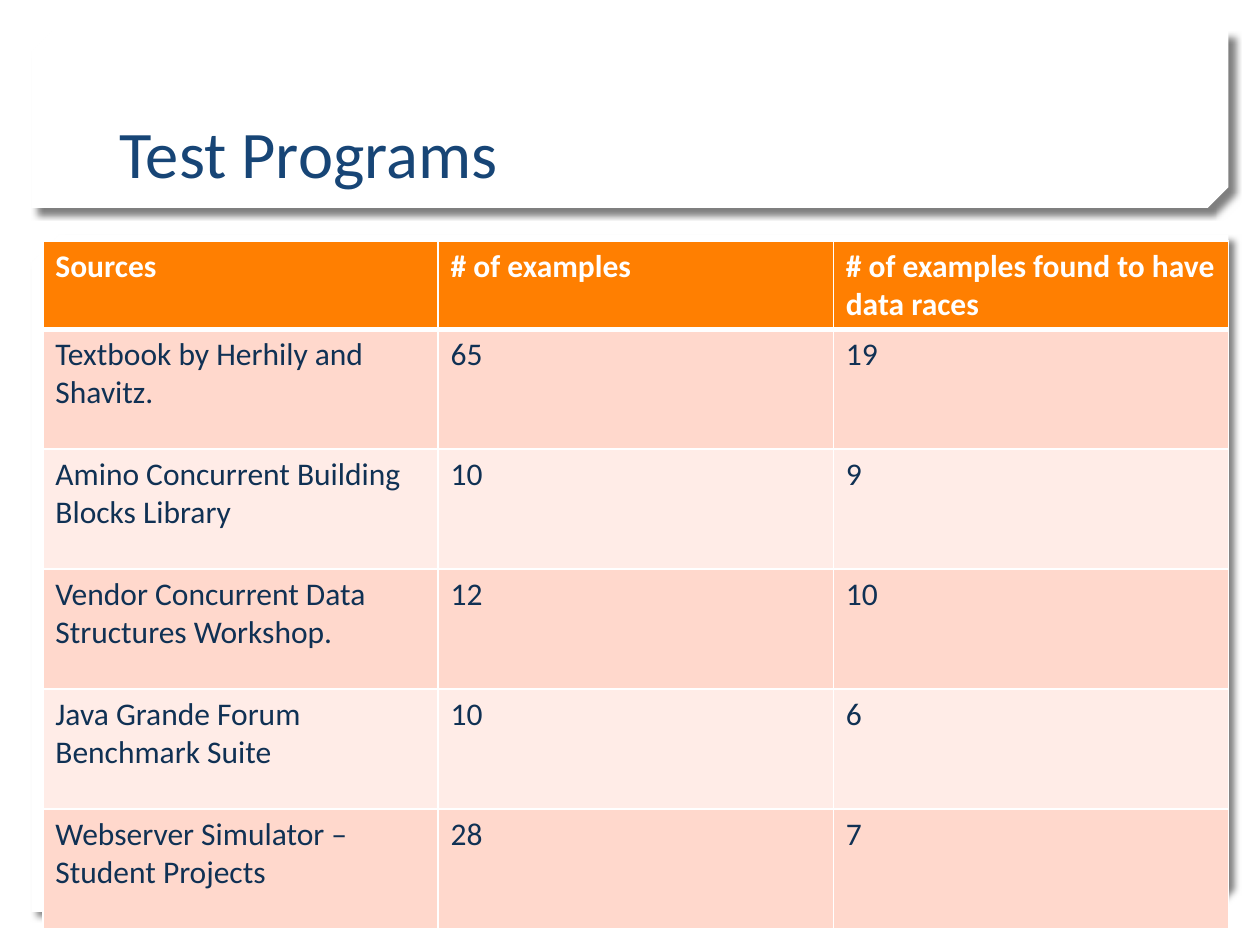
from dataclasses import dataclass

from lxml import etree
from pptx import Presentation
from pptx import util as u
from pptx.dml.color import RGBColor
from pptx.enum import shapes, text
from pptx.oxml import ns

WIDE, HIGH = 10, 7.5


@dataclass(frozen=True)
class Theme:
    font: str = "Calibri"
    head: int = 38
    body: int = 18
    white: str = "FFFFFF"
    title: str = "174576"
    ink: str = "103154"
    top: str = "FF7F01"
    bands: tuple = ("FFD8CC", "FFECE7")
    shade: str = "000000"


THEME = Theme()

ROWS = [
    ("Sources", "# of examples", "# of examples found to have data races"),
    ("Textbook by Herhily and Shavitz.", "65", "19"),
    ("Amino Concurrent Building Blocks Library", "10", "9"),
    ("Vendor Concurrent Data Structures Workshop.", "12", "10"),
    ("Java Grande Forum Benchmark Suite", "10", "6"),
    ("Webserver Simulator – Student Projects", "28", "7"),
]


def box(left, top, width, height):
    """Turn shares of the slide into lengths."""
    return (u.Inches(left * WIDE), u.Inches(top * HIGH),
            u.Inches(width * WIDE), u.Inches(height * HIGH))


def paint(fill, color):
    fill.solid()
    fill.fore_color.rgb = RGBColor.from_string(color)


def node(parent, tag, **attrs):
    item = etree.SubElement(parent, ns.qn(tag))
    for key, value in attrs.items():
        item.set(key, str(value))
    return item


def write(frame, words, size, color, bold=False):
    run = frame.paragraphs[0].add_run()
    run.text = words
    font = run.font
    font.name, font.size, font.bold = THEME.font, u.Pt(size), bold
    font.color.rgb = RGBColor.from_string(color)


def add_panel(slide, area, snip):
    """White card with one pair of snipped corners and a soft shadow."""
    card = slide.shapes.add_shape(
        shapes.MSO_SHAPE.SNIP_2_DIAG_RECTANGLE, *area)
    card.adjustments[0], card.adjustments[1] = 0, snip
    paint(card.fill, THEME.white)
    card.line.fill.background()
    props = card._element.spPr
    props.xfrm.set("flipV", "1")
    glow = node(node(props, "a:effectLst"), "a:outerShdw",
                blurRad=u.Pt(4), dist=u.Pt(5), dir=45 * 60000,
                algn="tl", rotWithShape=0)
    tint = node(glow, "a:srgbClr", val=THEME.shade)
    node(tint, "a:alpha", val=50000)


def add_title(slide, area, words):
    frame = slide.shapes.add_textbox(*area).text_frame
    frame.word_wrap = True
    frame.vertical_anchor = text.MSO_ANCHOR.BOTTOM
    write(frame, words, THEME.head, THEME.title)


def edge(cell, side, points):
    line = node(cell._tc.get_or_add_tcPr(), "a:ln" + side, w=u.Pt(points))
    node(node(line, "a:solidFill"), "a:srgbClr", val=THEME.white)


def fill_cell(cell, words, row):
    # Borders go before the fill; the rule under the header is thicker
    for side in "LRTB":
        edge(cell, side, 3 if (row, side) in ((0, "B"), (1, "T")) else 1)
    first = row == 0
    paint(cell.fill, THEME.top if first else THEME.bands[(row - 1) % 2])
    write(cell.text_frame, words, THEME.body,
          THEME.white if first else THEME.ink, first)


def add_grid(slide, area, rows, first):
    """Even columns; a header row and equal rows below it."""
    left, top, width, height = area
    grid = slide.shapes.add_table(len(rows), len(rows[0]), *area).table
    for col in grid.columns:
        col.width = width // len(rows[0])
    lead = int(height * first)
    for r, row in enumerate(rows):
        grid.rows[r].height = (
            lead if r == 0 else (height - lead) // (len(rows) - 1))
        for c, words in enumerate(row):
            fill_cell(grid.cell(r, c), words, r)


def main():
    deck = Presentation()
    deck.slide_width, deck.slide_height = u.Inches(WIDE), u.Inches(HIGH)
    slide = deck.slides.add_slide(deck.slide_layouts[6])

    # Backdrop cards: body, then title
    add_panel(slide, box(0.025, 0.249, 0.95, 0.716), 0.04)
    add_panel(slide, box(0.025, 0.033, 0.95, 0.187), 0.117)

    # Title and results
    add_title(slide, box(0.085, 0.043, 0.829, 0.167), "Test Programs")
    add_grid(slide, box(0.034, 0.255, 0.941, 0.728), ROWS, 0.128)

    deck.save("out.pptx")


if __name__ == "__main__":
    main()
